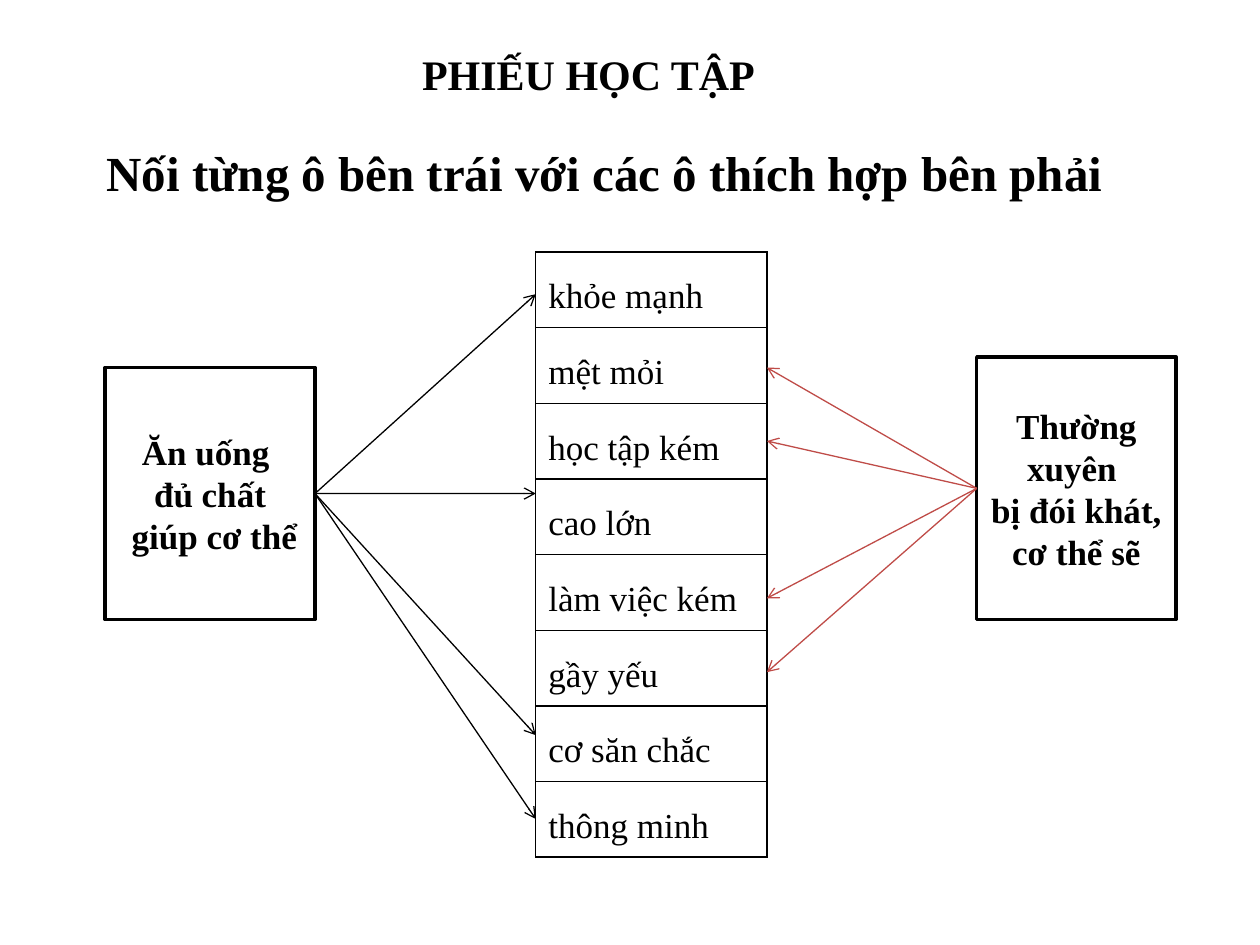
from dataclasses import dataclass

import pptx
import pptx.dml.color
import pptx.enum.shapes
import pptx.enum.text
import pptx.oxml
import pptx.oxml.ns
import pptx.util
from pptx.util import Cm, Pt


@dataclass(frozen=True)
class Theme:
    font: str = "Times New Roman"
    ink: str = "000000"
    paper: str = "FFFFFF"
    hungry: str = "BF4C48"
    heading_size: int = 24
    task_size: int = 28
    body_size: int = 20
    box_line: float = 2
    arrow_line: float = 0.75
    grid_line: float = 1


THEME = Theme()
EFFECTS = ["khỏe mạnh", "mệt mỏi", "học tập kém", "cao lớn",
           "làm việc kém", "gầy yếu", "cơ săn chắc", "thông minh"]
LIST_LEFT, LIST_TOP, LIST_WIDTH, ROW_HEIGHT = 10.8, 5.08, 4.66, 1.524


def rgb(value):
    return pptx.dml.color.RGBColor.from_string(value)


def style_text(frame, size, bold=True, align=None):
    for paragraph in frame.paragraphs:
        paragraph.alignment = align
        for run in paragraph.runs:
            run.font.name = THEME.font
            run.font.size = Pt(size)
            run.font.bold = bold
            run.font.color.rgb = rgb(THEME.ink)


def add_heading(slide, text, left, top, width, height, size):
    heading = slide.shapes.add_textbox(Cm(left), Cm(top), Cm(width), Cm(height))
    heading.text_frame.word_wrap = True
    heading.text_frame.text = text
    style_text(heading.text_frame, size)


def add_cause(slide, text, left, top, width, height):
    cause = slide.shapes.add_shape(pptx.enum.shapes.MSO_SHAPE.RECTANGLE,
                                   Cm(left), Cm(top), Cm(width), Cm(height))
    cause.shadow.inherit = False
    cause.fill.solid()
    cause.fill.fore_color.rgb = rgb(THEME.paper)
    cause.line.color.rgb = rgb(THEME.ink)
    cause.line.width = Pt(THEME.box_line)
    frame = cause.text_frame
    frame.word_wrap = True
    frame.vertical_anchor = pptx.enum.text.MSO_ANCHOR.MIDDLE
    frame.text = text
    style_text(frame, THEME.body_size, align=pptx.enum.text.PP_ALIGN.CENTER)
    return cause


def add_borders(cell):
    properties = cell._tc.get_or_add_tcPr()
    for side in ("lnL", "lnR", "lnT", "lnB"):
        properties.append(pptx.oxml.parse_xml(
            f'<a:{side} {pptx.oxml.ns.nsdecls("a")} w="{Pt(THEME.grid_line)}">'
            f'<a:solidFill><a:srgbClr val="{THEME.ink}"/></a:solidFill></a:{side}>'))


def add_effect_list(slide):
    table = slide.shapes.add_table(
        len(EFFECTS), 1, Cm(LIST_LEFT), Cm(LIST_TOP),
        Cm(LIST_WIDTH), Cm(ROW_HEIGHT * len(EFFECTS))).table
    table.first_row = table.horz_banding = False
    for row, effect in zip(table.rows, EFFECTS):
        row.height = Cm(ROW_HEIGHT)
        cell = row.cells[0]
        add_borders(cell)
        cell.fill.background()
        cell.text_frame.text = effect
        cell.text_frame.paragraphs[0].line_spacing = 1.5
        style_text(cell.text_frame, THEME.body_size, bold=False)


def add_arrows(slide, cause, site, list_edge, heights, color):
    """Fan arrows out from one side of a cause to heights on the list's edge."""
    for height in heights:
        arrow = slide.shapes.add_connector(
            pptx.enum.shapes.MSO_CONNECTOR.STRAIGHT,
            cause.left, cause.top, Cm(list_edge), Cm(height))
        arrow.begin_connect(cause, site)
        arrow.line.color.rgb = rgb(color)
        arrow.line.width = Pt(THEME.arrow_line)
        arrow.line._get_or_add_ln().append(pptx.oxml.parse_xml(
            f'<a:tailEnd {pptx.oxml.ns.nsdecls("a")} type="arrow"/>'))
        arrow._element.spPr.append(pptx.oxml.parse_xml(
            f'<a:effectLst {pptx.oxml.ns.nsdecls("a")}/>'))


def main():
    deck = pptx.Presentation()
    deck.slide_width, deck.slide_height = Cm(25.4), Cm(19.05)
    slide = deck.slides.add_slide(deck.slide_layouts[6])

    add_heading(slide, "PHIẾU HỌC TẬP", 8.26, 0.85, 7.83, 1.28, THEME.heading_size)
    add_heading(slide, "Nối từng ô bên trái với các ô thích hợp bên phải",
                1.9, 2.75, 22.23, 1.45, THEME.task_size)
    add_effect_list(slide)

    well_fed = add_cause(slide, "Ăn uống \nđủ chất\n giúp cơ thể",
                         2.12, 7.41, 4.23, 5.08)
    hungry = add_cause(slide, "Thường xuyên \nbị đói khát, cơ thể sẽ",
                       19.69, 7.2, 4.02, 5.29)
    add_arrows(slide, well_fed, 3, LIST_LEFT, [5.93, 9.95, 14.82, 16.51], THEME.ink)
    add_arrows(slide, hungry, 1, LIST_LEFT + LIST_WIDTH,
               [7.41, 8.89, 12.06, 13.55], THEME.hungry)
    deck.save("out.pptx")


if __name__ == "__main__":
    main()
